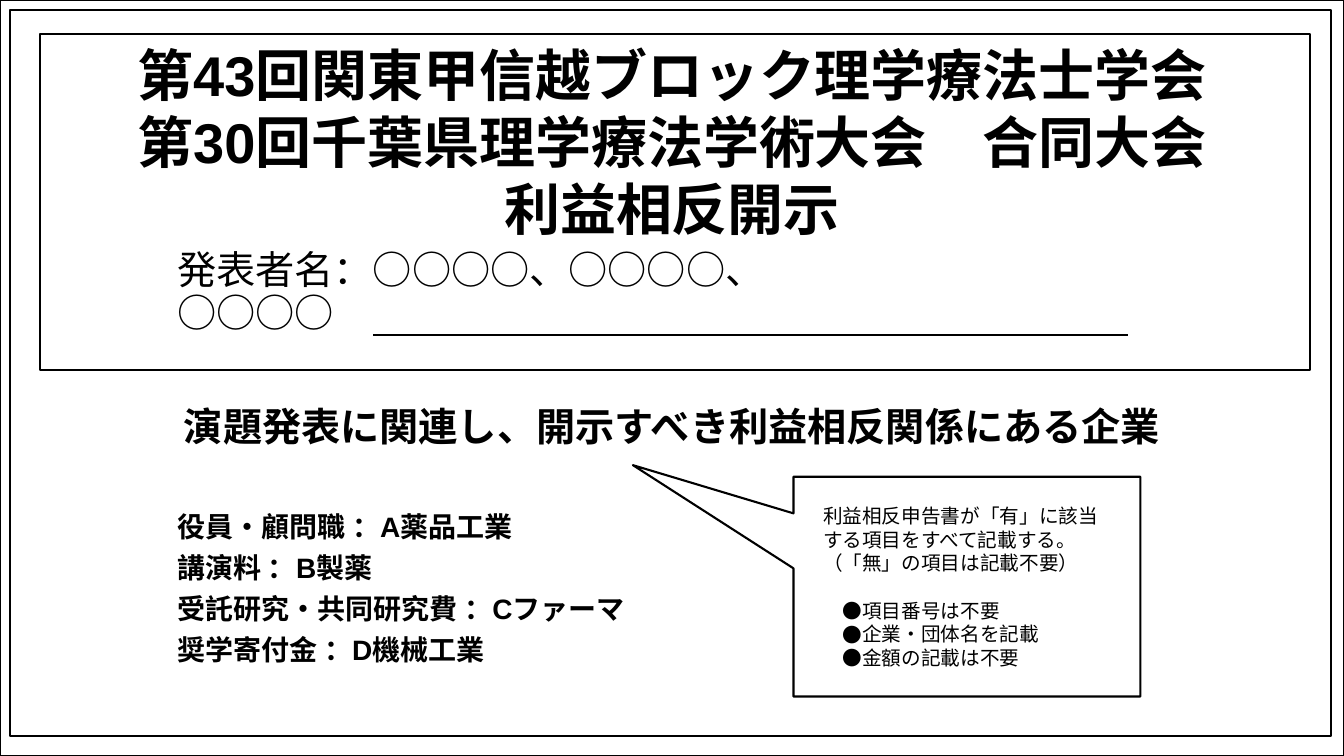
from lxml.etree import SubElement
from pptx import Presentation
from pptx.dml.color import RGBColor
from pptx.enum.shapes import MSO_CONNECTOR as Connector, MSO_SHAPE as Shape
from pptx.enum.text import MSO_ANCHOR as Anchor, MSO_AUTO_SIZE as AutoSize, PP_ALIGN as Align
from pptx.oxml.ns import qn
from pptx.util import Inches, Pt

WIDTH, HEIGHT = 13.33, 7.5
BLACK = "000000"
CJK = "Noto Sans CJK JP"
CONGRESS = ["第43回関東甲信越ブロック理学療法士学会",
            "第30回千葉県理学療法学術大会　合同大会", "利益相反開示"]
PRESENTERS = "発表者名：○○○○、○○○○、\v○○○○"
HEADING = "演題発表に関連し、開示すべき利益相反関係にある企業"
RELATIONS = ["役員・顧問職 ：A薬品工業", "講演料 ：B製薬",
             "受託研究・共同研究費 ：Cファーマ", "奨学寄付金 ：D機械工業"]
ADVICE = ["利益相反申告書が「有」に該当", "する項目をすべて記載する。",
          "（「無」の項目は記載不要）"]
RULES = ["項目番号は不要", "企業・団体名を記載", "金額の記載は不要"]


def color(value):
    """Turn a hex string into a colour."""
    return RGBColor.from_string(value)


def place(shape, box):
    """Move a shape to a box given in inches."""
    shape.left, shape.top, shape.width, shape.height = map(Inches, box)
    return shape


def write(frame, lines, size, bold=False, font="Arial", align=Align.LEFT,
          anchor=Anchor.TOP, spacing=1.0, before=0):
    """Fill a text frame with one formatted paragraph per line."""
    frame.word_wrap = True
    frame.auto_size = AutoSize.NONE
    frame.vertical_anchor = anchor
    frame.text = "\n".join(lines)
    for para in frame.paragraphs:
        para.alignment = align
        para.line_spacing = spacing
        para.space_before = Pt(before)
        for span in para.runs:
            span.font.size, span.font.bold, span.font.name = Pt(size), bold, font
            span.font.color.rgb = color(BLACK)
            SubElement(span.font._element, qn("a:ea"), typeface=CJK)
    return frame.paragraphs


def indent(para, left, bullet=None, hang=0):
    """Indent a paragraph, with a hanging bullet or with none."""
    props = para._p.get_or_add_pPr()
    props.set("marL", str(Inches(left + hang)))
    props.set("indent", str(-Inches(hang)))
    if bullet:
        SubElement(props, qn("a:buFont"), typeface=CJK)
        SubElement(props, qn("a:buChar"), char=bullet)
    else:
        SubElement(props, qn("a:buNone"))


def outline(page, box, kind=Shape.RECTANGLE):
    """Add an unfilled shape with a black outline."""
    shape = place(page.shapes.add_shape(kind, 0, 0, 0, 0), box)
    shape.shadow.inherit = False
    shape.fill.background()
    shape.line.color.rgb = color(BLACK)
    shape.line.width = Pt(1.5)
    return shape


def add_header(page, box):
    """Build the framed congress title with the presenter line."""
    left, top, width, height = box
    title = place(page.shapes.title, (0, top, WIDTH, 2.12))
    write(title.text_frame, CONGRESS, 40, bold=True, align=Align.CENTER, anchor=Anchor.MIDDLE)
    names_left = left + width * 0.1
    names = page.shapes.add_textbox(0, 0, 0, 0)
    place(names, (names_left, top + 2.19, WIDTH - names_left, 0.76))
    write(names.text_frame, [PRESENTERS], 28, anchor=Anchor.MIDDLE, spacing=0.9)
    rule_y = Inches(top + 2.98)
    rule = page.shapes.add_connector(
        Connector.STRAIGHT, Inches(left + 3.3), rule_y, Inches(left + 10.79), rule_y)
    rule.line.color.rgb = color(BLACK)
    rule.line.width = Pt(1.5)
    SubElement(rule._element.spPr, qn("a:effectLst"))
    outline(page, box)


def add_relations(page, box):
    """Build the heading and the list of companies below it."""
    left, top, width, height = box
    heading = place(page.shapes.add_textbox(0, 0, 0, 0), (0, top, WIDTH, 0.54))
    write(heading.text_frame, [HEADING], 28, bold=True, align=Align.CENTER)
    body = place(page.placeholders[1], (left, top + 1.13, width, height - 1.13))
    for para in write(body.text_frame, RELATIONS, 20, bold=True, spacing=0.8, before=10):
        indent(para, 0)


def add_callout(page, box):
    """Build the callout that explains what to fill in."""
    callout = outline(page, box, Shape.RECTANGULAR_CALLOUT)
    callout.adjustments[0], callout.adjustments[1] = -0.963, -0.553
    paras = write(callout.text_frame, ADVICE + RULES, 14, font=CJK, anchor=Anchor.MIDDLE)
    em = 14 / 72
    for para in paras[:len(ADVICE)]:
        indent(para, em)
    for para in paras[len(ADVICE):]:
        indent(para, 2 * em, bullet="●", hang=em)
    paras[len(ADVICE)].space_before = Pt(14 * 1.2)


def main():
    """Build the disclosure slide and save it."""
    deck = Presentation()
    deck.slide_width, deck.slide_height = Inches(WIDTH), Inches(HEIGHT)
    page = deck.slides.add_slide(deck.slide_layouts[1])
    add_header(page, (0.4, 0.34, 12.59, 3.33))
    add_relations(page, (1.66, 3.94, 4.83, 2.79))
    add_callout(page, (7.87, 4.73, 3.44, 2.18))
    outline(page, (0, 0, WIDTH, HEIGHT))
    outline(page, (0.1, 0.1, 13.1, 7.2))
    deck.save("out.pptx")


if __name__ == "__main__":
    main()
